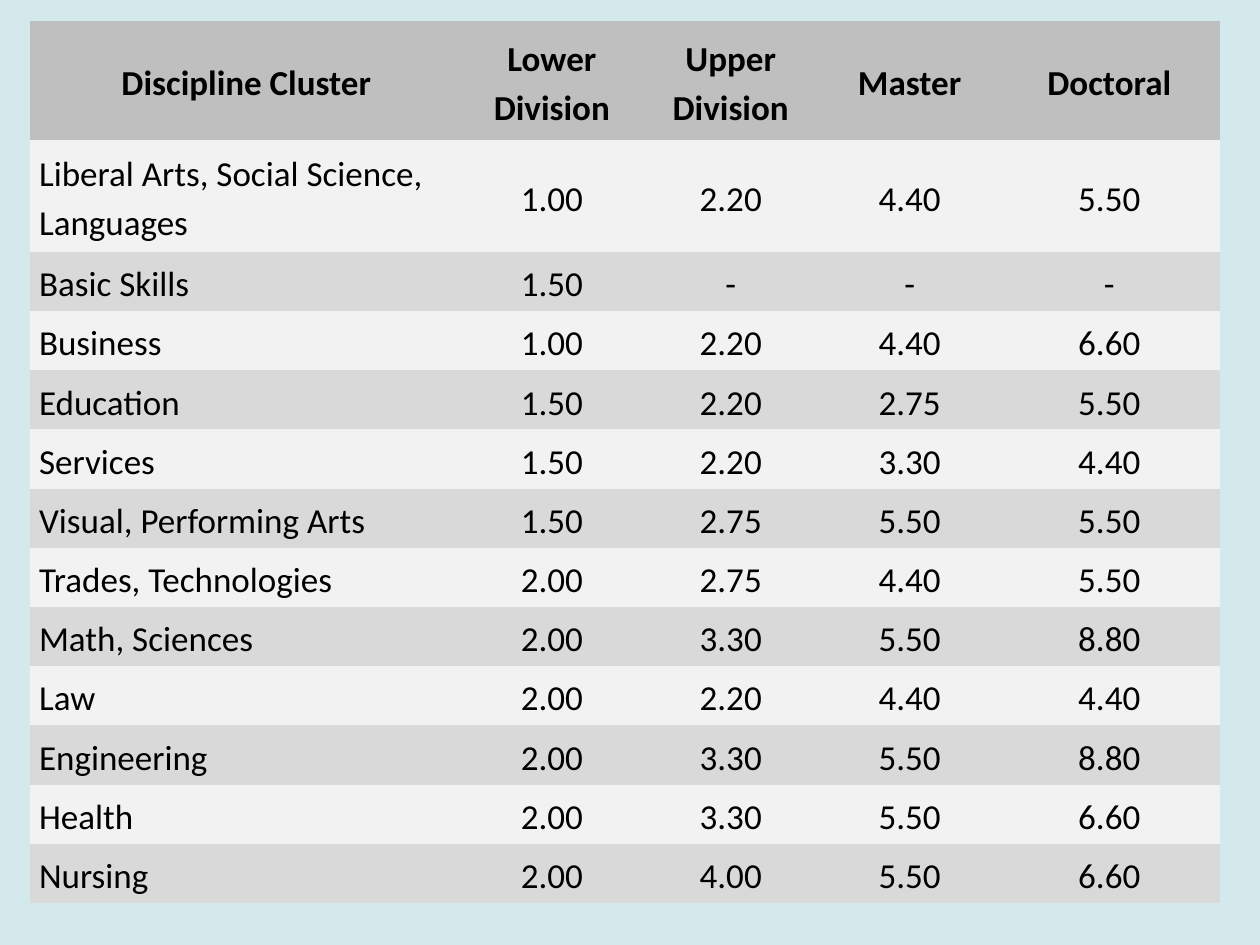
import pptx
import pptx.dml.color
import pptx.enum.text
import pptx.oxml.ns
import pptx.util
from pptx.util import Inches

COLORS = {
    "background": "D4E9EB",
    "header": "BFBFBF",
    "light": "F2F2F2",
    "dark": "D9D9D9",
    "text": "000000",
}
NO_STYLE_NO_GRID = "{2D5ABB26-0587-4C30-8999-92F81FD0307C}"

COLUMN_WIDTHS = [3.43, 1.42, 1.42, 1.42, 1.75]
ROWS = [
    ["Discipline Cluster", "Lower Division", "Upper Division", "Master", "Doctoral"],
    ["Liberal Arts, Social Science, Languages", "1.00", "2.20", "4.40", "5.50"],
    ["Basic Skills", "1.50", "-", "-", "-"],
    ["Business", "1.00", "2.20", "4.40", "6.60"],
    ["Education", "1.50", "2.20", "2.75", "5.50"],
    ["Services", "1.50", "2.20", "3.30", "4.40"],
    ["Visual, Performing Arts", "1.50", "2.75", "5.50", "5.50"],
    ["Trades, Technologies", "2.00", "2.75", "4.40", "5.50"],
    ["Math, Sciences", "2.00", "3.30", "5.50", "8.80"],
    ["Law", "2.00", "2.20", "4.40", "4.40"],
    ["Engineering", "2.00", "3.30", "5.50", "8.80"],
    ["Health", "2.00", "3.30", "5.50", "6.60"],
    ["Nursing", "2.00", "4.00", "5.50", "6.60"],
]
ROW_HEIGHTS = [0.94, 0.89] + [0.47] * (len(ROWS) - 2)


def rgb(name):
    return pptx.dml.color.RGBColor.from_string(COLORS[name])


presentation = pptx.Presentation()
presentation.slide_width = Inches(10)
presentation.slide_height = Inches(7.5)
slide = presentation.slides.add_slide(presentation.slide_layouts[6])
slide.background.fill.solid()
slide.background.fill.fore_color.rgb = rgb("background")

table = slide.shapes.add_table(
    len(ROWS), len(COLUMN_WIDTHS), Inches(0.24), Inches(0.17),
    Inches(sum(COLUMN_WIDTHS)), Inches(sum(ROW_HEIGHTS)),
).table
table._tbl.tblPr.find(pptx.oxml.ns.qn("a:tableStyleId")).text = NO_STYLE_NO_GRID

for column, width in zip(table.columns, COLUMN_WIDTHS):
    column.width = Inches(width)
for row, height in zip(table.rows, ROW_HEIGHTS):
    row.height = Inches(height)

for row_index, values in enumerate(ROWS):
    is_header = row_index == 0
    fill_name = "header" if is_header else "light" if row_index % 2 else "dark"
    for column_index, value in enumerate(values):
        cell = table.cell(row_index, column_index)
        cell.fill.solid()
        cell.fill.fore_color.rgb = rgb(fill_name)
        cell.vertical_anchor = pptx.enum.text.MSO_ANCHOR.MIDDLE
        cell.margin_left = cell.margin_right = Inches(0.07)
        cell.margin_top = cell.margin_bottom = 0

        paragraph = cell.text_frame.paragraphs[0]
        paragraph.text = value
        paragraph.line_spacing = 1.15
        if is_header or column_index > 0:
            paragraph.alignment = pptx.enum.text.PP_ALIGN.CENTER
        font = paragraph.runs[0].font
        font.name = "Calibri"
        font.size = pptx.util.Pt(20)
        font.bold = is_header
        font.color.rgb = rgb("text")

presentation.save("out.pptx")
